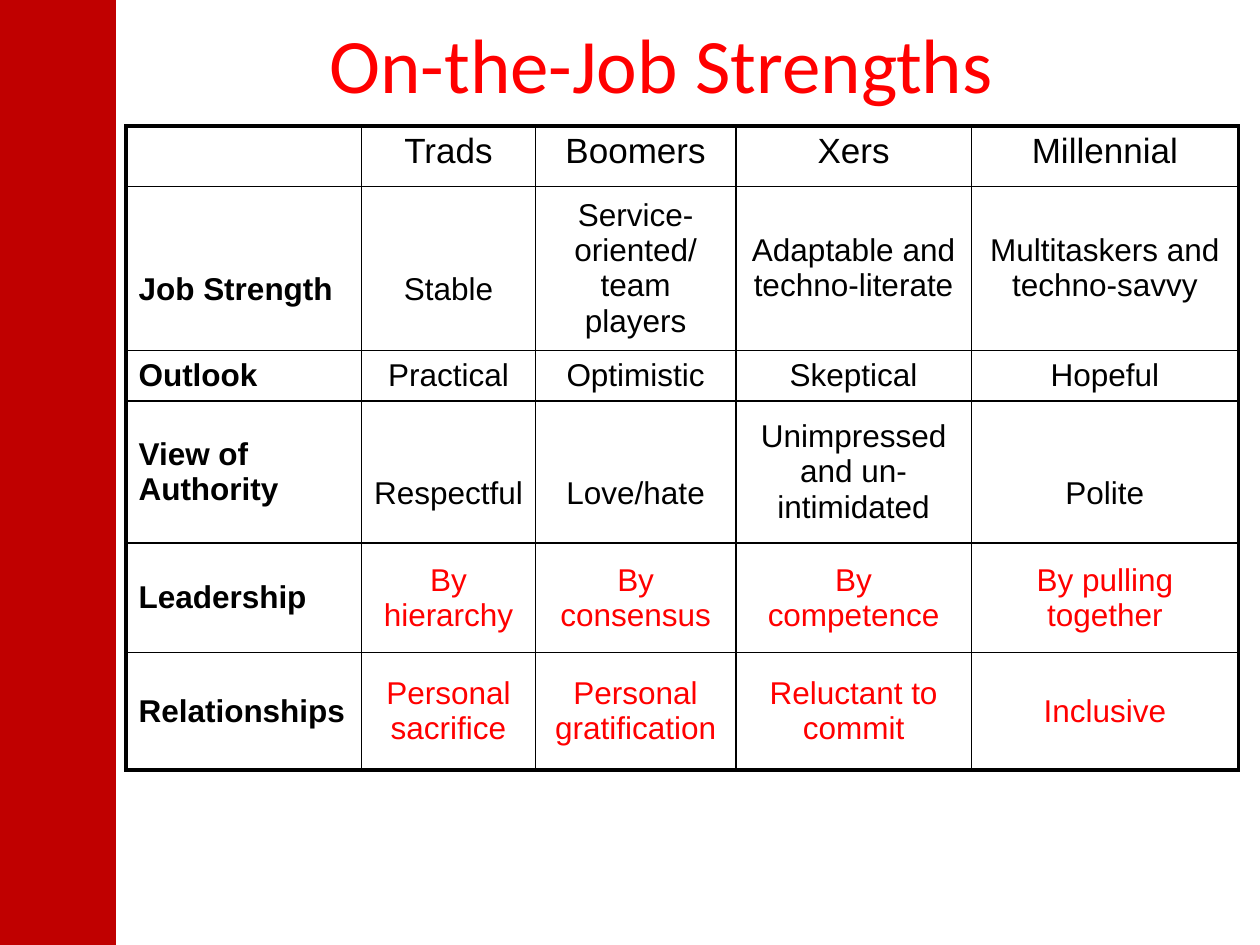
from dataclasses import dataclass

import pptx
import pptx.dml.color
import pptx.enum.shapes
import pptx.enum.text
import pptx.oxml
import pptx.oxml.ns
import pptx.util
from pptx.util import Inches

RGB = pptx.dml.color.RGBColor
ANCHOR = pptx.enum.text.MSO_ANCHOR
ALIGN = pptx.enum.text.PP_ALIGN


@dataclass(frozen=True)
class Theme:
    band: RGB = RGB(0xC0, 0x00, 0x00)
    accent: RGB = RGB(0xFF, 0x00, 0x00)
    ink: RGB = RGB(0x00, 0x00, 0x00)
    paper: RGB = RGB(0xFF, 0xFF, 0xFF)
    title_font: str = "Calibri"
    table_font: str = "Arial"
    title_size: float = 44
    header_size: float = 20
    body_size: float = 18
    outer_line: float = 2.25
    inner_line: float = 1


THEME = Theme()

COLUMN_WIDTHS = [1.87, 1.38, 1.59, 1.87, 2.12]
ROW_HEIGHTS = [0.48, 1.22, 0.38, 1.13, 0.87, 0.93]
STRENGTHS = [
    ["", "Trads", "Boomers", "Xers", "Millennial"],
    ["Job Strength", "Stable", "Service-oriented/team players",
     "Adaptable and techno-literate", "Multitaskers and techno-savvy"],
    ["Outlook", "Practical", "Optimistic", "Skeptical", "Hopeful"],
    ["View of Authority", "Respectful", "Love/hate",
     "Unimpressed and un-intimidated", "Polite"],
    ["Leadership", "By hierarchy", "By consensus", "By competence", "By pulling together"],
    ["Relationships", "Personal sacrifice", "Personal gratification",
     "Reluctant to commit", "Inclusive"],
]
ACCENT_ROWS = {4, 5}
LOWERED_CELLS = {(1, 0), (1, 1), (3, 1), (3, 2), (3, 4)}
LOWERED_MARGIN = 0.39
LABEL_MARGIN = 0.1
CENTERED_MARGIN = 0.08


def style_text(para, font_name, size, color, align, bold=False):
    para.alignment = align
    for span in para.runs:
        span.font.name = font_name
        span.font.size = pptx.util.Pt(size)
        span.font.color.rgb = color
        span.font.bold = bold


def add_side_band(page, left, top, width, height):
    band = page.shapes.add_shape(
        pptx.enum.shapes.MSO_SHAPE.RECTANGLE, left, top, width, height)
    band.shadow.inherit = False
    band.fill.solid()
    band.fill.fore_color.rgb = THEME.band
    band.line.fill.background()


def add_title(page, left, top, width, height):
    box = page.shapes.add_textbox(left, top, width, height)
    frame = box.text_frame
    frame.word_wrap = True
    frame.vertical_anchor = ANCHOR.MIDDLE
    frame.text = "On-the-Job Strengths"
    style_text(frame.paragraphs[0], THEME.title_font, THEME.title_size,
               THEME.accent, ALIGN.CENTER)


def set_borders(cell, outer_sides):
    """Rule all four sides, heavier on those at the edge of the table."""
    properties = cell._tc.get_or_add_tcPr()
    for index, side in enumerate("LRTB"):
        points = THEME.outer_line if side in outer_sides else THEME.inner_line
        border = pptx.oxml.parse_xml(
            f'<a:ln{side} {pptx.oxml.ns.nsdecls("a")} w="{pptx.util.Pt(points)}">'
            f'<a:solidFill><a:srgbClr val="{THEME.ink}"/></a:solidFill>'
            f'</a:ln{side}>')
        properties.insert(index, border)


def fill_cell(cell, row, column, text):
    is_header, is_label = row == 0, column == 0
    cell.fill.solid()
    cell.fill.fore_color.rgb = THEME.paper
    cell.vertical_anchor = ANCHOR.TOP if is_header else ANCHOR.MIDDLE
    side_margin = Inches(LABEL_MARGIN if is_label else CENTERED_MARGIN)
    cell.margin_left = cell.margin_right = side_margin
    cell.margin_top = cell.margin_bottom = Inches(0.05)
    if (row, column) in LOWERED_CELLS:
        cell.margin_top = Inches(LOWERED_MARGIN)
    cell.text_frame.text = text
    style_text(
        cell.text_frame.paragraphs[0],
        THEME.table_font,
        THEME.header_size if is_header else THEME.body_size,
        THEME.accent if row in ACCENT_ROWS and not is_label else THEME.ink,
        ALIGN.LEFT if is_label else ALIGN.CENTER,
        bold=is_label,
    )
    edges = {"L": is_label, "R": column == len(COLUMN_WIDTHS) - 1,
             "T": is_header, "B": row == len(ROW_HEIGHTS) - 1}
    set_borders(cell, [side for side, is_edge in edges.items() if is_edge])


def add_strengths_table(page, left, top, width, height):
    table = page.shapes.add_table(
        len(ROW_HEIGHTS), len(COLUMN_WIDTHS), left, top, width, height).table
    table.first_row = table.horz_banding = False
    for column, size in zip(table.columns, COLUMN_WIDTHS):
        column.width = Inches(size)
    for row, size in zip(table.rows, ROW_HEIGHTS):
        row.height = Inches(size)
    for row, texts in enumerate(STRENGTHS):
        for column, text in enumerate(texts):
            fill_cell(table.cell(row, column), row, column, text)


def main():
    deck = pptx.Presentation()
    deck.slide_width, deck.slide_height = Inches(10), Inches(7.5)
    page = deck.slides.add_slide(deck.slide_layouts[6])
    add_side_band(page, Inches(0), Inches(0), Inches(0.92), deck.slide_height)
    add_title(page, Inches(1), Inches(0), Inches(8.5), Inches(1))
    add_strengths_table(page, Inches(1), Inches(1),
                        Inches(sum(COLUMN_WIDTHS)), Inches(sum(ROW_HEIGHTS)))
    deck.save("out.pptx")


if __name__ == "__main__":
    main()
